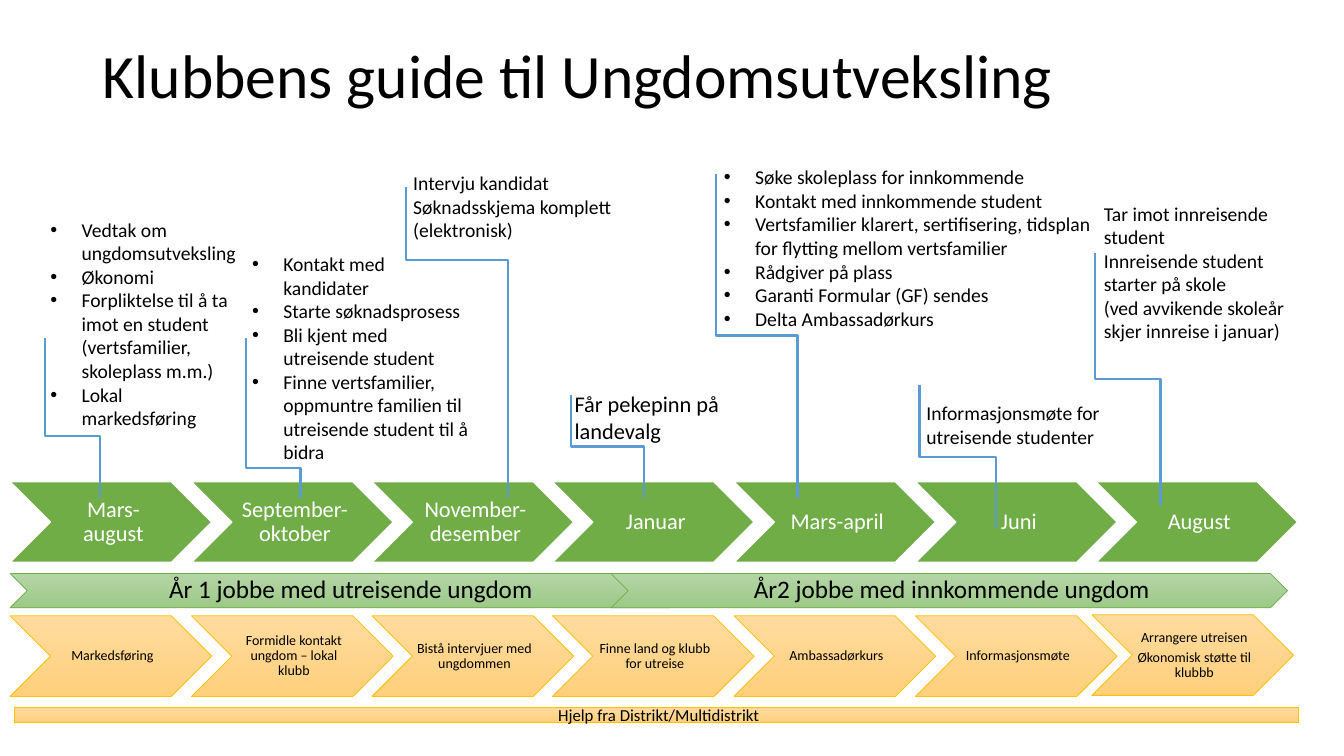
from dataclasses import dataclass

import pptx
import pptx.dml.color
import pptx.enum.shapes
import pptx.enum.text
import pptx.oxml.ns
import pptx.util
from lxml import etree

SHAPES = pptx.enum.shapes.MSO_SHAPE
ALIGN = pptx.enum.text.PP_ALIGN
ANCHOR = pptx.enum.text.MSO_ANCHOR
EMU_PER_PX = 9144  # 100 px to the inch


@dataclass(frozen=True)
class Theme:
    font: str = "Calibri"
    ink: str = "000000"
    white: str = "FFFFFF"
    green: str = "70AD47"
    pale_green: tuple = ("B5D5A7", "9CC987")
    amber: str = "FFC000"
    pale_amber: tuple = ("FFDB9E", "FFD07C")
    connector: str = "5B9BD5"
    title: int = 44
    year: int = 18
    month: int = 16
    note: int = 14
    footer: int = 12
    task: int = 10


@dataclass(frozen=True)
class Style:
    colours: tuple  # one colour is solid, two make a gradient
    outline: str
    outline_width: float
    size: int
    ink: str
    insets: tuple  # left, then the other three sides


@dataclass(frozen=True)
class Note:
    frame: tuple  # left, top, width, height
    lines: tuple
    start: tuple  # connector foot
    bend: int  # height of the horizontal run
    end: tuple  # connector top
    placeholder: int = 0  # bulleted lists fill a body placeholder
    size: int = 14


THEME = Theme()
MONTH = Style((THEME.green,), THEME.white, 1, THEME.month, THEME.white, (7, 2))
YEAR = Style(THEME.pale_green, THEME.green, 0.5, THEME.year, THEME.ink, (8, 3))
TASK = Style(THEME.pale_amber, THEME.amber, 0.5, THEME.task, THEME.ink, (4, 1))
FOOTER = Style(THEME.pale_amber, THEME.amber, 0.5, THEME.footer, THEME.ink, (10, 5))

MONTHS = ("Mars-august", "September-oktober", "November-desember", "Januar",
          "Mars-april", "Juni", "August")
TASKS = (("Markedsføring",), ("Formidle kontakt ungdom – lokal klubb",),
         ("Bistå intervjuer med ungdommen",), ("Finne land og klubb for utreise",),
         ("Ambassadørkurs",), ("Informasjonsmøte",),
         ("Arrangere utreisen", "Økonomisk støtte til klubbb"))
YEARS = ("År 1 jobbe med utreisende ungdom", "År2 jobbe med innkommende ungdom")
NOTES = (
    Note((40, 211, 208, 222),
         ("Vedtak om ungdomsutveksling", "Økonomi",
          "Forpliktelse til å ta imot en student (vertsfamilier, skoleplass m.m.)",
          "Lokal markedsføring"),
         (99, 494), 433, (45, 335), placeholder=1),
    Note((240, 245, 237, 222),
         ("Kontakt med kandidater", "Starte søknadsprosess",
          "Bli kjent med utreisende student",
          "Finne vertsfamilier, oppmuntre familien til utreisende student til å bidra"),
         (298, 494), 464, (244, 335), placeholder=2),
    Note((400, 165, 290, 81),
         ("Intervju kandidat", "Søknadsskjema komplett (elektronisk)"),
         (504, 494), 258, (403, 186)),
    Note((560, 382, 239, 64), ("Får pekepinn på landevalg",),
         (639, 494), 443, (566, 392), size=THEME.month),
    Note((708, 159, 409, 175),
         ("Søke skoleplass for innkommende", "Kontakt med innkommende student",
          "Vertsfamilier klarert, sertifisering, tidsplan for flytting mellom vertsfamilier",
          "Rådgiver på plass", "Garanti Formular (GF) sendes", "Delta Ambassadørkurs"),
         (791, 494), 333, (710, 173), placeholder=4),
    Note((909, 393, 206, 57), ("Informasjonsmøte for utreisende studenter",),
         (988, 524), 453, (912, 382)),
    Note((1085, 195, 203, 151),
         ("Tar imot innreisende student", "Innreisende student starter på skole",
          "(ved avvikende skoleår skjer innreise i januar)"),
         (1151, 501), 376, (1086, 251)),
)


def px(length: float) -> pptx.util.Emu:
    return pptx.util.Emu(int(length * EMU_PER_PX))


def rgb(value: str) -> pptx.dml.color.RGBColor:
    return pptx.dml.color.RGBColor.from_string(value)


def place(box, frame: tuple) -> None:
    box.left, box.top, box.width, box.height = map(px, frame)


def write(box, lines: tuple, size: int, ink: str = THEME.ink, align=ALIGN.LEFT,
          anchor=ANCHOR.TOP, spacing: float = 1.0, after: float = 0) -> None:
    frame = box.text_frame
    frame.text = "\n".join(lines)
    frame.word_wrap = True
    frame.auto_size = pptx.enum.text.MSO_AUTO_SIZE.NONE
    frame.vertical_anchor = anchor
    for para in frame.paragraphs:
        para.alignment = align
        para.line_spacing = spacing
        para.space_before = pptx.util.Pt(0)
        para.space_after = pptx.util.Pt(after)
        para.font.name = THEME.font
        para.font.size = pptx.util.Pt(size)
        para.font.bold = False
        para.font.color.rgb = rgb(ink)


def add_bullets(box) -> None:
    for para in box.text_frame.paragraphs:
        properties = para._p.get_or_add_pPr()
        properties.set("marL", str(px(31)))
        properties.set("indent", str(px(-31)))
        font = etree.Element(pptx.oxml.ns.qn("a:buFont"), typeface="Arial")
        bullet = etree.Element(pptx.oxml.ns.qn("a:buChar"), char="•")
        defaults = properties.find(pptx.oxml.ns.qn("a:defRPr"))
        defaults.addprevious(font)
        defaults.addprevious(bullet)


def add_band(page, preset, frame: tuple, lines: tuple, style: Style,
             spacing: float = 0.9, after: float = 0.35) -> None:
    box = page.shapes.add_shape(preset, *map(px, frame))
    box.shadow.inherit = False
    if len(style.colours) == 1:
        box.fill.solid()
        box.fill.fore_color.rgb = rgb(style.colours[0])
    else:
        box.fill.gradient()
        box.fill.gradient_angle = 270
        for stop, colour in zip(box.fill.gradient_stops, style.colours):
            stop.color.rgb = rgb(colour)
    box.line.color.rgb = rgb(style.outline)
    box.line.width = pptx.util.Pt(style.outline_width)
    write(box, lines, style.size, style.ink, ALIGN.CENTER, ANCHOR.MIDDLE,
          spacing, style.size * after)
    text = box.text_frame
    text.margin_left = px(style.insets[0])
    text.margin_top = text.margin_right = text.margin_bottom = px(style.insets[1])


def add_elbow(page, start: tuple, bend: int, end: tuple) -> None:
    """Rises from start, runs left at bend, then rises to end."""
    width, height = start[0] - end[0], start[1] - end[1]
    middle_x, middle_y = (start[0] + end[0]) / 2, (start[1] + end[1]) / 2
    elbow = page.shapes.add_connector(
        pptx.enum.shapes.MSO_CONNECTOR.ELBOW,
        px(middle_x - height / 2), px(middle_y + width / 2),
        px(middle_x + height / 2), px(middle_y - width / 2))
    elbow.line.color.rgb = rgb(THEME.connector)
    elbow.line.width = pptx.util.Pt(1.5)
    properties = elbow._element.spPr
    properties.find(pptx.oxml.ns.qn("a:xfrm")).set("rot", "16200000")
    guides = properties.find(".//" + pptx.oxml.ns.qn("a:avLst"))
    share = round((start[1] - bend) / height * 100000)
    etree.SubElement(guides, pptx.oxml.ns.qn("a:gd"), name="adj1", fmla=f"val {share}")
    etree.SubElement(properties, pptx.oxml.ns.qn("a:effectLst"))


def add_note(page, note: Note) -> None:
    if note.placeholder:
        box = page.placeholders[note.placeholder]
        place(box, note.frame)
    else:
        box = page.shapes.add_textbox(*map(px, note.frame))
    write(box, note.lines, note.size)
    if note.placeholder:
        add_bullets(box)
    add_elbow(page, note.start, note.bend, note.end)


def main() -> None:
    deck = pptx.Presentation()
    deck.slide_width, deck.slide_height = px(1333), px(750)
    page = deck.slides.add_slide(deck.slide_layouts.get_by_name("Comparison"))
    unused = page.placeholders[3]._element
    unused.getparent().remove(unused)

    # Title
    place(page.shapes.title, (92, 40, 1150, 145))
    write(page.shapes.title, ("Klubbens guide til Ungdomsutveksling",), THEME.title,
          spacing=0.9)

    # Months and the notes above them
    columns = [round(10 + 179.5 * index) for index in range(len(MONTHS))]
    for left, month in zip(columns, MONTHS):
        add_band(page, SHAPES.CHEVRON, (left, 478, 200, 80), (month,), MONTH)
    for note in NOTES:
        add_note(page, note)

    # Years
    for index, year in enumerate(YEARS):
        add_band(page, SHAPES.CHEVRON, (10 + 596 * index, 569, 671, 34), (year,), YEAR)

    # Tasks, the last one set slightly apart
    spots = [(left, 611) for left in columns[:-1]] + [(1083, 610)]
    for spot, task in zip(spots, TASKS):
        add_band(page, SHAPES.CHEVRON, (*spot, 200, 80), task, TASK)

    # Support bar
    add_band(page, SHAPES.RECTANGLE, (14, 702, 1274, 15),
             ("Hjelp fra Distrikt/Multidistrikt",), FOOTER, spacing=1.0, after=0)

    deck.save("out.pptx")


if __name__ == "__main__":
    main()
